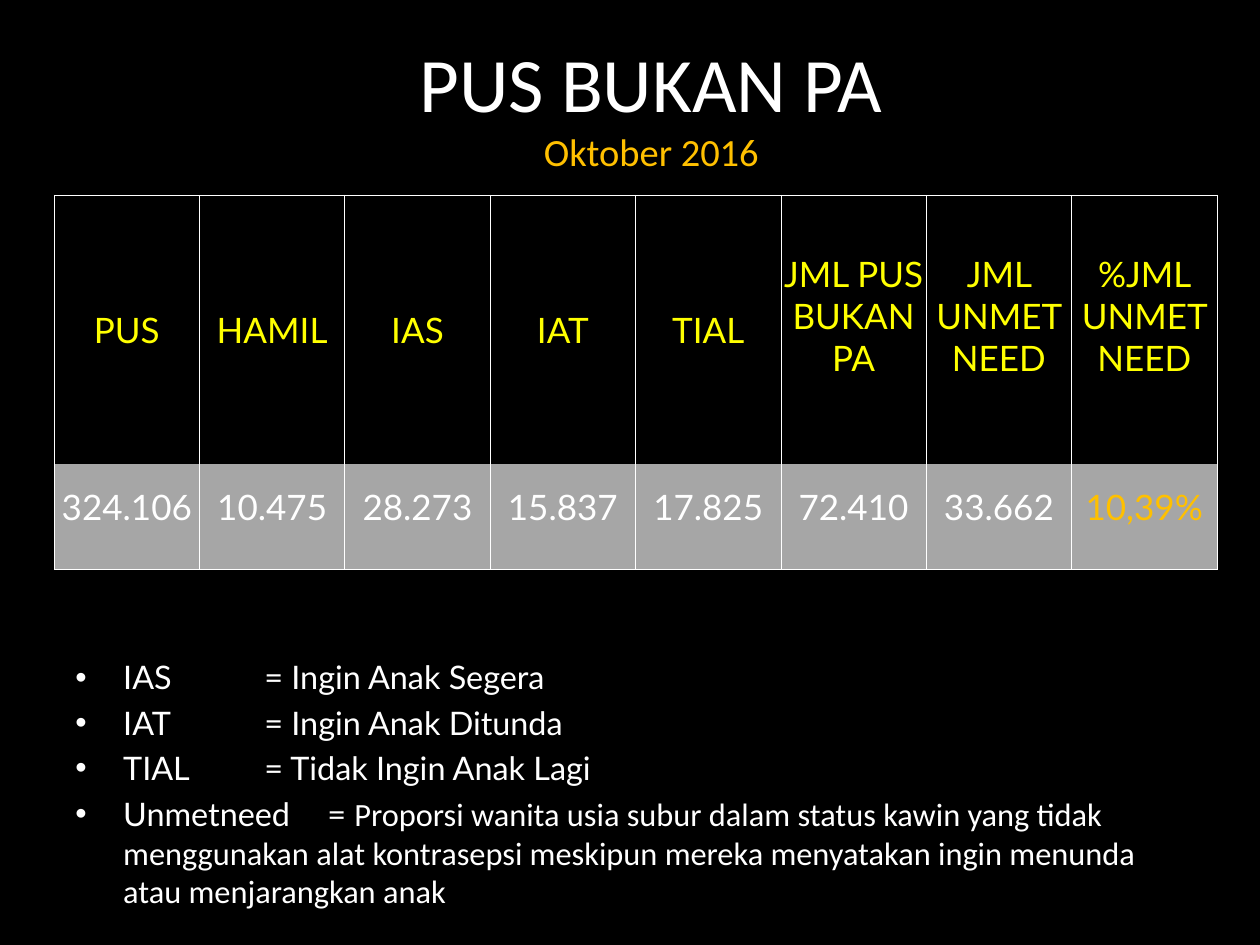
from dataclasses import dataclass

from lxml.etree import SubElement
from pptx import Presentation
from pptx.dml.color import RGBColor
from pptx.enum.text import MSO_ANCHOR, PP_ALIGN
from pptx.oxml.ns import qn
from pptx.util import Inches, Pt

WHITE, BLACK, GRAY, YELLOW, GOLD = "FFFFFF", "000000", "A6A6A6", "FFFF00", "FFC000"


@dataclass
class Column:
    heading: str
    value: str
    anchor: MSO_ANCHOR = MSO_ANCHOR.MIDDLE
    value_color: str = WHITE


@dataclass
class Term:
    label: str
    meaning: str
    meaning_font: str = "Lato"


COLUMNS = [
    Column("PUS", "324.106"),
    Column("HAMIL", "10.475"),
    Column("IAS", "28.273"),
    Column("IAT", "15.837"),
    Column("TIAL", "17.825"),
    Column("JML PUS BUKAN PA", "72.410", MSO_ANCHOR.BOTTOM),
    Column("JML UNMET NEED", "33.662", MSO_ANCHOR.BOTTOM),
    Column("%JML UNMET NEED", "10,39%", MSO_ANCHOR.BOTTOM, GOLD),
]
TERMS = [
    Term("IAS \t\t= ", "Ingin Anak Segera"),
    Term("IAT \t\t= ", "Ingin Anak Ditunda"),
    Term("TIAL\t\t= ", "Tidak Ingin Anak Lagi"),
    Term("Unmetneed \t= ",
         "Proporsi wanita usia subur dalam status kawin yang tidak menggunakan alat "
         "kontrasepsi meskipun mereka menyatakan ingin menunda atau menjarangkan anak",
         "Calibri"),
]


def rgb(color: str) -> RGBColor:
    """Turn a hex string into a colour."""
    return RGBColor.from_string(color)


def add_run(paragraph, text: str, size: float, font: str, color: str) -> None:
    """Append one formatted run."""
    run = paragraph.add_run()
    run.text = text
    run.font.size = Pt(size)
    run.font.name = font
    run.font.color.rgb = rgb(color)


def add_frame(slide, left: float, top: float, width: float, height: float):
    """Add a wrapping text box and return its text frame."""
    frame = slide.shapes.add_textbox(
        Inches(left), Inches(top), Inches(width), Inches(height)).text_frame
    frame.word_wrap = True
    return frame


def next_paragraph(frame, index: int):
    """Return the first paragraph, or a new one after it."""
    return frame.add_paragraph() if index else frame.paragraphs[0]


def add_title(slide) -> None:
    """Add the centred heading and its date."""
    frame = add_frame(slide, 0.67, 0.21, 9, 1.25)
    frame.vertical_anchor = MSO_ANCHOR.MIDDLE
    lines = [("PUS BUKAN PA", 44, WHITE), ("Oktober 2016", 22, GOLD)]
    for index, (text, size, color) in enumerate(lines):
        paragraph = next_paragraph(frame, index)
        paragraph.alignment = PP_ALIGN.CENTER
        add_run(paragraph, text, size, "Calibri", color)


def set_borders(cell, visible: str) -> None:
    """Draw thin white lines on the visible sides and none on the others."""
    properties = cell._tc.get_or_add_tcPr()
    for side in "LRTB":
        line = SubElement(properties, qn(f"a:ln{side}"), w=str(Pt(0.5)))
        if side in visible:
            fill = SubElement(line, qn("a:solidFill"))
            SubElement(fill, qn("a:srgbClr"), val=WHITE)
        else:
            SubElement(line, qn("a:noFill"))


def fill_cell(cell, text: str, color: str, background: str, borders: str,
              anchor: MSO_ANCHOR, bottom: float) -> None:
    """Write and format one table cell."""
    set_borders(cell, borders)
    cell.fill.solid()
    cell.fill.fore_color.rgb = rgb(background)
    cell.margin_left = cell.margin_right = cell.margin_top = Inches(0.01)
    cell.margin_bottom = Inches(bottom)
    cell.vertical_anchor = anchor
    paragraph = cell.text_frame.paragraphs[0]
    paragraph.alignment = PP_ALIGN.CENTER
    add_run(paragraph, text, 20, "Lato", color)


def add_counts(slide) -> None:
    """Add the table of counts."""
    table = slide.shapes.add_table(
        2, len(COLUMNS), Inches(0.43), Inches(1.55), Inches(9.23), Inches(2.97)).table
    table.rows[0].height, table.rows[1].height = Inches(2.13), Inches(0.84)
    for index, column in enumerate(COLUMNS):
        heading_bottom = 0.67 if column.anchor == MSO_ANCHOR.BOTTOM else 0
        fill_cell(table.cell(0, index), column.heading, YELLOW, BLACK, "LRT",
                  column.anchor, heading_bottom)
        fill_cell(table.cell(1, index), column.value, column.value_color, GRAY, "LRB",
                  MSO_ANCHOR.BOTTOM, 0.33)


def add_legend(slide) -> None:
    """Add the bulleted list of abbreviations."""
    frame = add_frame(slide, 0.5, 5.17, 9, 2.1)
    for index, term in enumerate(TERMS):
        paragraph = next_paragraph(frame, index)
        paragraph.space_before = Pt(3.7 if index else 0)
        properties = paragraph._p.get_or_add_pPr()
        properties.set("marL", str(Inches(0.38)))
        properties.set("indent", str(Inches(-0.38)))
        SubElement(properties, qn("a:buFont"), typeface="Arial")
        SubElement(properties, qn("a:buChar"), char="•")
        add_run(paragraph, term.label, 18.5, "Lato", WHITE)
        add_run(paragraph, term.meaning, 18.5, term.meaning_font, WHITE)


def main() -> None:
    """Build and save the slide."""
    presentation = Presentation()
    presentation.slide_width, presentation.slide_height = Inches(10), Inches(7.5)
    slide = presentation.slides.add_slide(presentation.slide_layouts[6])
    slide.background.fill.solid()
    slide.background.fill.fore_color.rgb = rgb(BLACK)
    add_legend(slide)
    add_title(slide)
    add_counts(slide)
    presentation.save("out.pptx")


if __name__ == "__main__":
    main()
